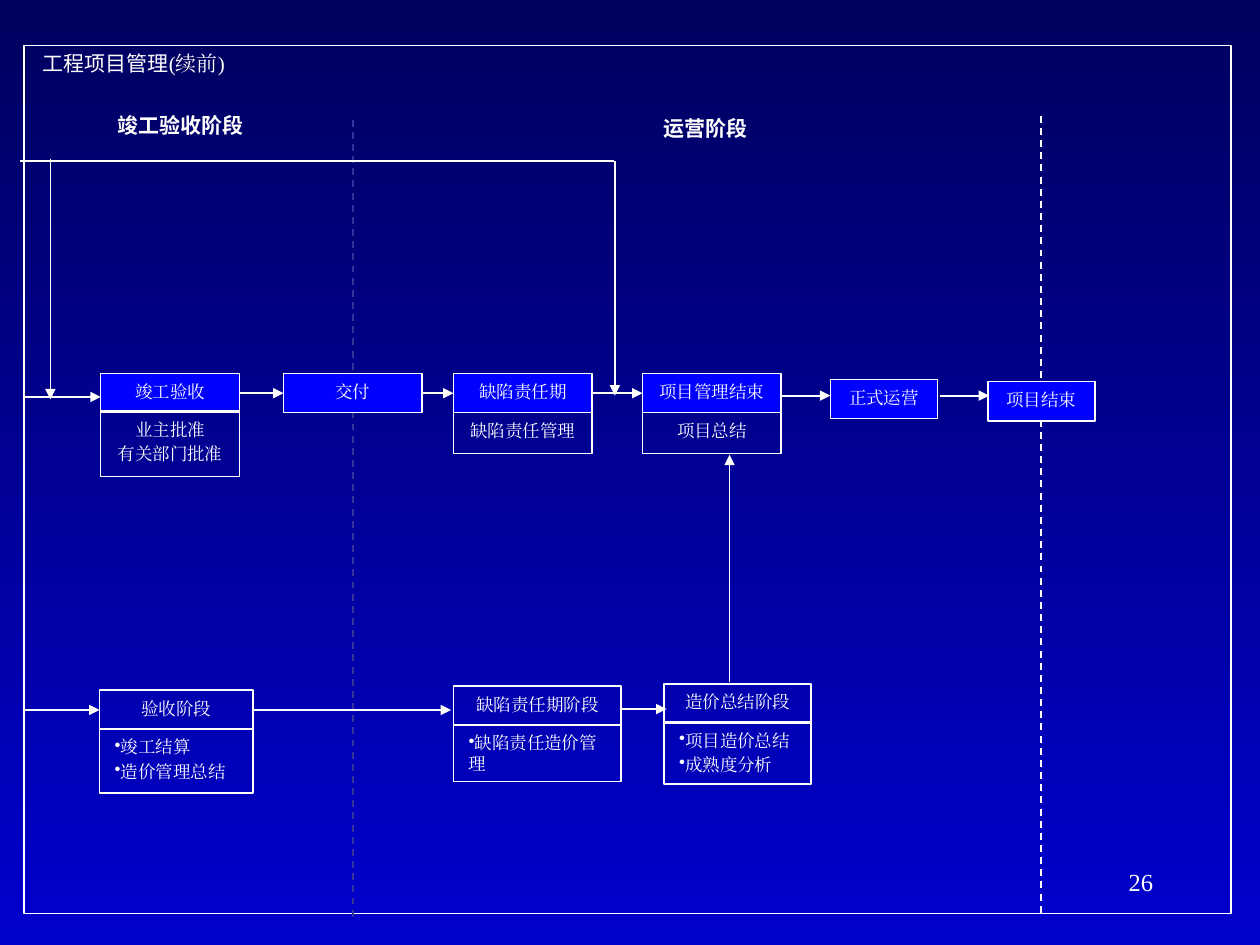
from lxml.etree import SubElement
from pptx import Presentation
from pptx.dml.color import RGBColor
from pptx.enum.dml import MSO_LINE
from pptx.enum.shapes import MSO_CONNECTOR, MSO_SHAPE
from pptx.enum.text import MSO_ANCHOR, MSO_AUTO_SIZE, PP_ALIGN
from pptx.oxml.ns import qn
from pptx.util import Pt

WHITE = RGBColor(0xFF, 0xFF, 0xFF)
BLUE = RGBColor(0x00, 0x00, 0xFF)
INDIGO = RGBColor(0x33, 0x33, 0x99)
NIGHT = RGBColor(0x00, 0x00, 0x5E)
ROYAL = RGBColor(0x00, 0x00, 0xCC)
SERIF, SANS = "Times New Roman", "Noto Sans CJK SC"
HEAD = 22.4
LEFT, RIGHT = 1, 3


class Chart:
    """Draws the flow chart's parts on one slide, in points."""

    def __init__(self, slide):
        self.slide = slide
        self.shapes = slide.shapes

    def back(self):
        fill = self.slide.background.fill
        fill.gradient()
        fill.gradient_angle = 270
        for stop, color, spot in zip(fill.gradient_stops, (NIGHT, ROYAL), (0, 1)):
            stop.color.rgb = color
            stop.position = spot

    def run(self, para, text, size, font, bold=False):
        run = para.add_run()
        run.text = text
        run.font.size = Pt(size)
        run.font.name = font
        run.font.bold = bold
        run.font.color.rgb = WHITE
        SubElement(run.font._element, qn("a:ea")).set("typeface", font)

    def frame(self, shape, pad):
        text = shape.text_frame
        text.word_wrap = True
        text.auto_size = MSO_AUTO_SIZE.NONE
        text.vertical_anchor = MSO_ANCHOR.TOP
        text.margin_left = text.margin_right = Pt(2 * pad)
        text.margin_top = text.margin_bottom = Pt(pad)
        return text

    def fill(self, frame, lines, size=10, font=SERIF, bold=False,
             align=PP_ALIGN.CENTER, bullet=False):
        """Write one paragraph for each line."""
        for i, line in enumerate(lines):
            para = frame.add_paragraph() if i else frame.paragraphs[0]
            para.alignment = align
            para.space_before = Pt(size * 0.2)
            if bullet:
                props = para._p.get_or_add_pPr()
                props.set("marL", "0")
                props.set("indent", "0")
                SubElement(props, qn("a:buChar")).set("char", "•")
            self.run(para, line, size, font, bold)

    def title(self, x, y, w, h, parts):
        shape = self.shapes.title
        shape.left, shape.top, shape.width, shape.height = map(Pt, (x, y, w, h))
        para = self.frame(shape, 3.6).paragraphs[0]
        para.alignment = PP_ALIGN.LEFT
        para.line_spacing = 0.8
        for text, font in parts:
            self.run(para, text, 12, font)

    def label(self, x, y, w, h, text, pad=4.32, **style):
        shape = self.shapes.add_textbox(*map(Pt, (x, y, w, h)))
        self.fill(self.frame(shape, pad), [text], **style)

    def box(self, x, y, w, h, lines=(), color=None, width=0.75, **style):
        shape = self.shapes.add_shape(MSO_SHAPE.RECTANGLE, *map(Pt, (x, y, w, h)))
        shape.shadow.inherit = False
        if color is None:
            shape.fill.background()
        else:
            shape.fill.solid()
            shape.fill.fore_color.rgb = color
        shape.line.color.rgb = WHITE
        shape.line.width = Pt(width)
        self.fill(self.frame(shape, 4.32), lines, **style)
        return shape

    def line(self, start, end, color=WHITE, width=1, dash=False, arrow=False):
        """Join two ends, each a point or a (shape, site) pair."""
        ends = [self.spot(*end) for end in (start, end)]
        link = self.shapes.add_connector(MSO_CONNECTOR.STRAIGHT, *ends[0], *ends[1])
        for (shape, site), join in ((start, link.begin_connect), (end, link.end_connect)):
            if hasattr(shape, "shape_id"):
                join(shape, site)
        link.line.color.rgb = color
        link.line.width = Pt(width)
        if dash:
            link.line.dash_style = MSO_LINE.DASH
        if arrow:
            SubElement(link.line._get_or_add_ln(), qn("a:tailEnd")).set("type", "triangle")
        SubElement(link._element.spPr, qn("a:effectLst"))

    def spot(self, a, b):
        if not hasattr(a, "shape_id"):
            return Pt(a), Pt(b)
        return a.left + (a.width if b == RIGHT else 0), a.top + a.height // 2

    def arrow(self, start, end, width=1):
        self.line(start, end, width=width, arrow=True)


def main():
    deck = Presentation()
    deck.slide_width, deck.slide_height = Pt(720), Pt(540)
    chart = Chart(deck.slides.add_slide(deck.slide_layouts[5]))
    chart.back()
    chart.title(17.3, 28.1, 170, 23.8, [("工程项目管理", SANS), ("(续前)", SERIF)])
    chart.box(13.7, 25.9, 689.8, 496.1)
    chart.label(516.2, 491.8, 149.8, 36, "26", pad=3.6, size=14, align=PP_ALIGN.RIGHT)
    chart.label(51.1, 59.8, 104.4, 22.3, "竣工验收阶段", size=12, font=SANS, bold=True)
    chart.label(365, 61.9, 76.3, 22.3, "运营阶段", size=12, font=SANS, bold=True)
    chart.line((201.6, 68.4), (201.6, 525.6), color=INDIGO, dash=True)
    chart.line((594.7, 66.2), (594.7, 523.4), dash=True)

    steps = [
        ("竣工验收", 57.6, 213.5, 79.2),
        ("交付", 162, 213.5, 79.2),
        ("缺陷责任期", 259.2, 213.5, 79.2),
        ("项目管理结束", 367.2, 213.5, 79.2),
        ("正式运营", 474.5, 216.7, 61.2),
        ("项目结束", 564.5, 218.2, 61.2),
    ]
    check, hand, defect, close, *_ = [
        chart.box(x, y, w, HEAD, [text], BLUE) for text, x, y, w in steps]
    tasks = [
        (57.6, 234.9, 37.4, ["业主批准", "有关部门批准"]),
        (259.2, 235.9, 23.3, ["缺陷责任管理"]),
        (367.2, 235.9, 23.3, ["项目总结"]),
    ]
    for x, y, h, lines in tasks:
        chart.box(x, y, 79.2, h, lines)

    costs = [
        ("验收阶段", 56.9, 394.5, 87.8, 36.7, ["竣工结算", "造价管理总结"]),
        ("缺陷责任期阶段", 259.2, 392.2, 95.8, 32.4, ["缺陷责任造价管理"]),
        ("造价总结阶段", 379.4, 390.7, 84.2, 35.3, ["项目造价总结", "成熟度分析"]),
    ]
    heads = []
    for text, x, y, w, h, lines in costs:
        heads.append(chart.box(x, y, w, HEAD, [text], width=1))
        chart.box(x, y + HEAD - 0.4, w, h, lines, width=1,
                  align=PP_ALIGN.LEFT, bullet=True)

    chart.line((11.5, 92.2), (350.6, 92.2))
    for start, end in [
        ((28.8, 90.7), (28.8, 228.2)),
        ((351.4, 92.2), (351.4, 226.1)),
        ((13, 226.8), (57.6, 226.8)),
        ((check, RIGHT), (hand, LEFT)),
        ((hand, RIGHT), (defect, LEFT)),
        ((defect, RIGHT), (close, LEFT)),
        ((446, 226.1), (474.5, 226.1)),
        ((537, 226.1), (565.2, 226.1)),
        ((416.9, 389.5), (416.9, 259.9)),
        ((13.7, 405.7), (heads[0], LEFT)),
        ((355.7, 405.2), (380.9, 405.2)),
    ]:
        chart.arrow(start, end)
    chart.arrow((heads[0], RIGHT), (257.8, 405.7), width=0.75)
    deck.save("out.pptx")


if __name__ == "__main__":
    main()
